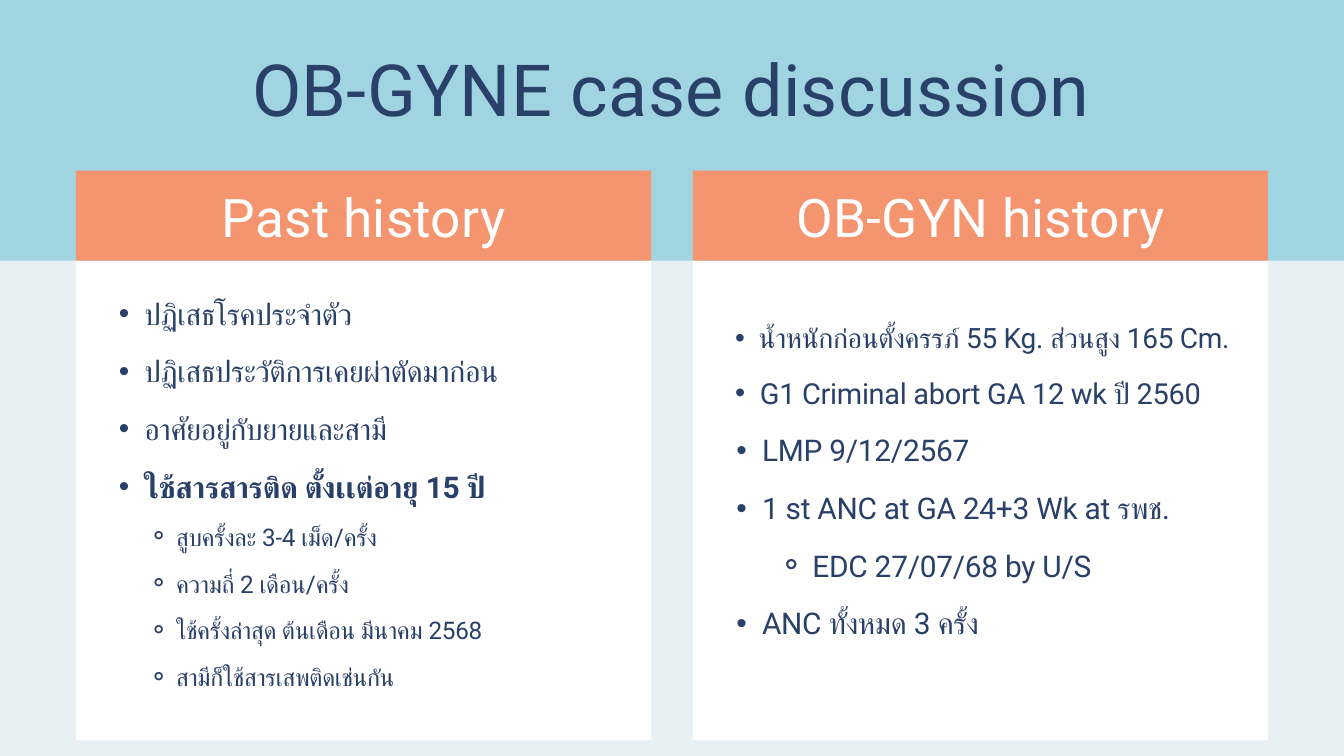
from lxml import etree
from pptx import Presentation
from pptx.dml.color import RGBColor
from pptx.enum.shapes import MSO_SHAPE
from pptx.enum.text import MSO_AUTO_SIZE, PP_ALIGN
from pptx.oxml.ns import qn
from pptx.util import Inches, Pt

RECTANGLE = MSO_SHAPE.RECTANGLE
GROW = MSO_AUTO_SIZE.SHAPE_TO_FIT_TEXT
CENTER = PP_ALIGN.CENTER
FONT = "Roboto"
COLORS = {"page": "E7F1F4", "band": "A1D4E1", "card": "FFFFFF",
          "header": "F4956F", "ink": "294069", "light": "FFFFFF"}
BULLETS = {1: "•", 2: "⚬"}
BAND_HEIGHT = 3.88
CARD_WIDTH, CARD_HEIGHT, HEADER_HEIGHT = 8.56, 7.14, 1.34
CARD_TOP = BAND_HEIGHT - HEADER_HEIGHT

PAST_HISTORY = [
    *((text, 1, 32, 61.8, 0.76, 0.38, False) for text in (
        "ปฏิเสธโรคประจำตัว", "ปฏิเสธประวัติการเคยผ่าตัดมาก่อน", "อาศัยอยู่กับยายและสามี")),
    ("ใช้สารสารติด ตั้งเเต่อายุ 15 ปี", 1, 32, 61.8, 0.76, 0.38, True),
    *((text, 2, 26, 50.2, 1.23, 0.41, False) for text in (
        "สูบครั้งละ 3-4 เม็ด/ครั้ง", "ความถี่ 2 เดือน/ครั้ง",
        "ใช้ครั้งล่าสุด ต้นเดือน มีนาคม 2568", "สามีก็ใช้สารเสพติดเช่นกัน")),
]
OBGYN_HISTORY = [
    ("น้ำหนักก่อนตั้งครรภ์ 55 Kg. ส่วนสูง 165 Cm.", 1, 30, 57.9, 0.71, 0.35, False),
    ("G1 Criminal abort GA 12 wk ปี 2560", 1, 31, 59.8, 0.73, 0.37, False),
    ("LMP 9/12/2567", 1, 32, 61.8, 0.76, 0.38, False),
    ("1 st ANC at GA 24+3 Wk at รพช.", 1, 32, 61.8, 0.76, 0.38, False),
    ("EDC 27/07/68 by U/S", 2, 32, 61.8, 1.51, 0.5, False),
    ("ANC ทั้งหมด 3 ครั้ง", 1, 32, 61.8, 0.76, 0.38, False),
]


def add_panel(page, left, top, width, height, color):
    """Add a plain filled rectangle."""
    panel = page.shapes.add_shape(RECTANGLE, Inches(left), Inches(top),
                                  Inches(width), Inches(height))
    panel.shadow.inherit = False
    panel.fill.solid()
    panel.fill.fore_color.rgb = RGBColor.from_string(COLORS[color])
    panel.line.fill.background()


def add_text_frame(page, left, top, width, height):
    """Add a wrapping text box without insets and return its text frame."""
    box = page.shapes.add_textbox(Inches(left), Inches(top), Inches(width), Inches(height))
    frame = box.text_frame
    frame.word_wrap = True
    frame.auto_size = GROW
    frame.margin_left = frame.margin_right = frame.margin_top = frame.margin_bottom = 0
    return frame


def style_paragraph(para, size, spacing, color, tracking, bold=False):
    """Set line spacing and font, including the complex-script face."""
    para.line_spacing = Pt(spacing)
    font = para.font
    font.size = Pt(size)
    font.bold = bold
    font.name = FONT
    font.color.rgb = RGBColor.from_string(COLORS[color])
    properties = para._p.pPr.find(qn("a:defRPr"))
    properties.set("spc", str(round(tracking * 100)))
    etree.SubElement(properties, qn("a:cs")).set("typeface", FONT)


def add_heading(page, left, top, width, height, text, size, spacing, color, tracking):
    """Add one centred line of text."""
    para = add_text_frame(page, left, top, width, height).paragraphs[0]
    para.text = text
    para.alignment = CENTER
    style_paragraph(para, size, spacing, color, tracking)


def add_bullets(page, left, top, width, height, items):
    """Add a two-level bulleted list."""
    frame = add_text_frame(page, left, top, width, height)
    for index, (text, level, size, spacing, margin, hanging, bold) in enumerate(items):
        para = frame.add_paragraph() if index else frame.paragraphs[0]
        para.text = text
        para.level = level
        properties = para._p.get_or_add_pPr()
        properties.set("marL", str(Inches(margin)))
        properties.set("indent", str(-Inches(hanging)))
        etree.SubElement(properties, qn("a:buFont")).set("typeface", "Arial")
        etree.SubElement(properties, qn("a:buChar")).set("char", BULLETS[level])
        style_paragraph(para, size, spacing, "ink", -0.3, bold)


def add_card(page, left, top, heading, items, list_box):
    """Add a white card with a coloured header and a list."""
    list_left, list_top, list_width, list_height = list_box
    body_top = top + HEADER_HEIGHT
    add_panel(page, left, body_top, CARD_WIDTH, CARD_HEIGHT, "card")
    add_panel(page, left, top, CARD_WIDTH, HEADER_HEIGHT, "header")
    add_heading(page, left + 0.72, top + 0.28, 7.13, 0.89, heading, 57, 62.7, "light", 0.3)
    add_bullets(page, left + list_left, body_top + list_top, list_width, list_height, items)


def main():
    """Build and save the deck."""
    deck = Presentation()
    deck.slide_width, deck.slide_height = Inches(20), Inches(11.25)
    page = deck.slides.add_slide(deck.slide_layouts[6])
    page.background.fill.solid()
    page.background.fill.fore_color.rgb = RGBColor.from_string(COLORS["page"])
    add_panel(page, 0, 0, 20, BAND_HEIGHT, "band")
    add_heading(page, 1.96, 0.77, 16.07, 1.19, "OB-GYNE case discussion", 77, 84.7, "ink", 0.4)
    add_card(page, 1.13, CARD_TOP, "Past history", PAST_HISTORY, (0.26, 0.19, 8.04, 6.11))
    add_card(page, 10.31, CARD_TOP, "OB-GYN history", OBGYN_HISTORY, (0.27, 0.59, 8.3, 5.8))
    deck.save("out.pptx")


if __name__ == "__main__":
    main()
